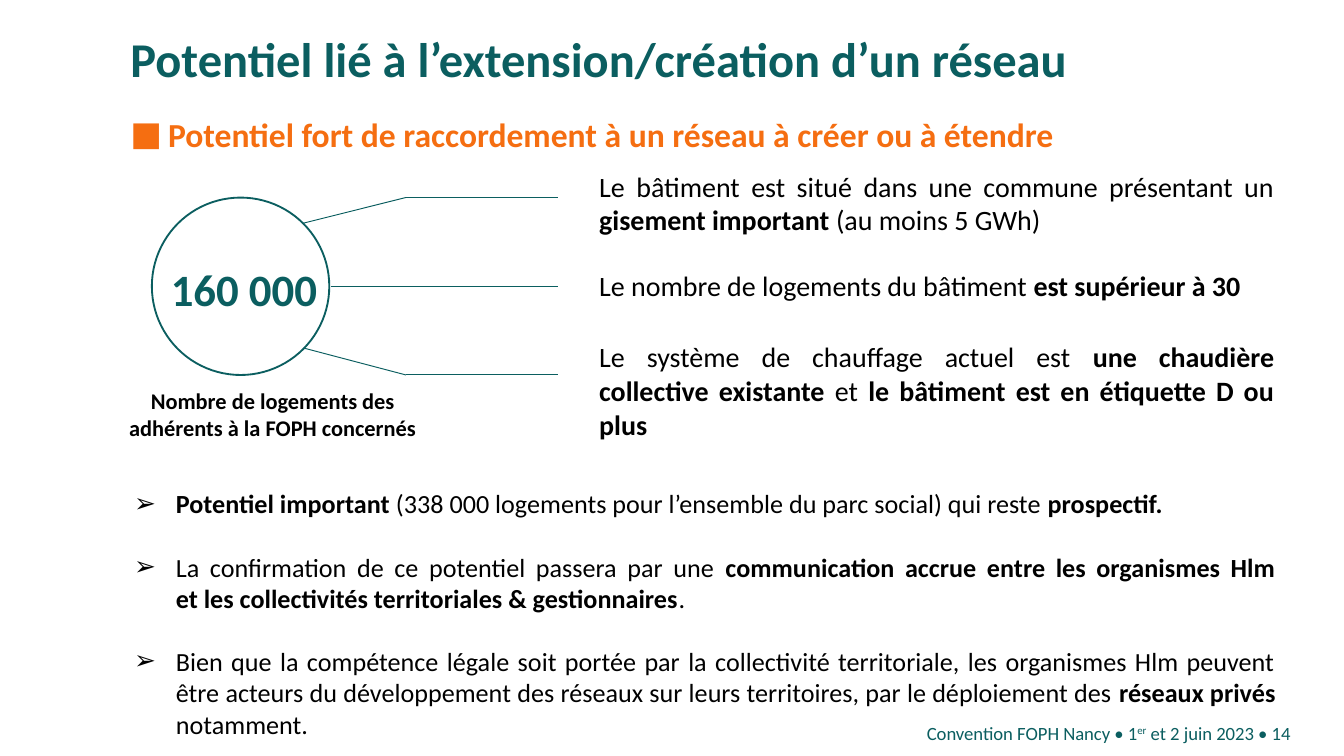
from lxml import etree
from pptx import Presentation
from pptx.dml.color import RGBColor
from pptx.enum import shapes, text
from pptx.oxml.ns import qn
from pptx.util import Inches, Pt

TEAL, ORANGE, BLACK = "0B5E60", "F56E11", "000000"
ALIGN = text.PP_ALIGN
FONT = "Calibri"
HARD_SPACE = chr(160)

deck = Presentation()
deck.slide_width, deck.slide_height = Inches(10), Inches(10 * 9 / 16)
page = deck.slides.add_slide(deck.slide_layouts[6])


def rgb(value):
    return RGBColor.from_string(value)


def add_text(place, paragraphs, size, color=BLACK, bold=None, align=ALIGN.LEFT,
             padded=True, anchor=text.MSO_ANCHOR.TOP, bullet=None, indent=0,
             line_spacing=None, gap=0):
    """Add a text box; words between ** marks are bold."""
    box = page.shapes.add_textbox(*[Inches(value) for value in place])
    frame = box.text_frame
    frame.word_wrap = True
    frame.vertical_anchor = anchor
    if not padded:
        frame.margin_left = frame.margin_right = 0
        frame.margin_top = frame.margin_bottom = 0
    for index, content in enumerate(paragraphs):
        para = frame.paragraphs[0] if index == 0 else frame.add_paragraph()
        para.alignment = align
        if line_spacing:
            para.line_spacing = line_spacing
        if index and gap:
            para.space_before = Pt(gap)
        if bullet:
            properties = para._p.get_or_add_pPr()
            properties.set("marL", str(Inches(indent)))
            properties.set("indent", str(-Inches(indent)))
            etree.SubElement(properties, qn("a:buFont")).set("typeface", FONT)
            etree.SubElement(properties, qn("a:buChar")).set("char", bullet)
        para.font.name = FONT
        para.font.size = Pt(size)
        para.font.color.rgb = rgb(color)
        para.font.bold = bold
        for position, words in enumerate(content.split("**")):
            if words:
                span = para.add_run()
                span.text = words
                if position % 2:
                    span.font.bold = True
    return box


# Title and subtitle
add_text((0.97, 0.28, 8.76, 0.42), ["Potentiel lié à l’extension/création d’un réseau"],
         26, TEAL, bold=True, padded=False, line_spacing=0.85)
add_text((0.97, 0.88, 8.75, 0.42),
         ["Potentiel fort de raccordement à un réseau à créer ou à étendre"],
         18, ORANGE, bold=True, padded=False, bullet="■", indent=0.28, line_spacing=0.9)

# Key figure in its circle
circle = page.shapes.add_shape(shapes.MSO_SHAPE.OVAL, Inches(1.13), Inches(1.47),
                               Inches(1.32), Inches(1.32))
circle.shadow.inherit = False
circle.fill.background()
circle.line.color.rgb = rgb(TEAL)
circle.line.width = Pt(1)
add_text((1.17, 1.9, 1.29, 0.5), ["160 000"], 24, TEAL, bold=True, align=ALIGN.CENTER)
add_text((0.75, 2.83, 2.56, 0.5), ["Nombre de logements des adhérents à la FOPH concernés"],
         12, bold=True, align=ALIGN.CENTER)

# Leader lines from the circle to the criteria
leaders = [
    [(2.26, 1.66), (3.02, 1.47), (4.15, 1.47)],
    [(2.46, 2.13), (4.15, 2.13)],
    [(2.26, 2.59), (3.02, 2.79), (4.15, 2.79)],
]
for points in leaders:
    for start, end in zip(points, points[1:]):
        leader = page.shapes.add_connector(
            shapes.MSO_CONNECTOR.STRAIGHT, *[Inches(value) for value in start + end])
        leader.line.color.rgb = rgb(TEAL)
        leader.line.width = Pt(0.5)
        etree.SubElement(leader._element.spPr, qn("a:effectLst"))

# Criteria
criteria = [
    (1.21, 0.61, ALIGN.JUSTIFY, "Le bâtiment est situé dans une commune présentant un "
     "**gisement important **(au moins 5 GWh)"),
    (1.95, 0.35, ALIGN.LEFT, "Le nombre de logements du bâtiment **est supérieur à 30**"),
    (2.48, 0.86, ALIGN.JUSTIFY, "Le système de chauffage actuel est **une chaudière collective "
     "existante **et **le bâtiment est en étiquette D ou plus**"),
]
for top, height, align, content in criteria:
    add_text((4.36, top, 5.22, height), [content], 15, align=align)

# Conclusions
conclusions = [
    "**Potentiel important **(338 000 logements pour l’ensemble du parc social) "
    "qui reste **prospectif.**",
    "La confirmation de ce potentiel passera par une **communication accrue entre les "
    f"organismes Hlm et{HARD_SPACE}les collectivités territoriales & gestionnaires**.",
    "Bien que la compétence légale soit portée par la collectivité territoriale, les "
    "organismes Hlm peuvent être acteurs du développement des réseaux sur leurs territoires, "
    "par le déploiement des **réseaux privés **notamment.",
]
add_text((0.9, 3.58, 8.69, 1.99), conclusions, 14, align=ALIGN.JUSTIFY,
         bullet="➢", indent=0.31, gap=17)

# Footer, with the ordinal raised
footer = add_text((3.42, 5.38, 5.91, 0.15), ["Convention FOPH Nancy • 1"], 10, TEAL,
                  align=ALIGN.RIGHT, padded=False, anchor=text.MSO_ANCHOR.MIDDLE)
footer_para = footer.text_frame.paragraphs[0]
ordinal = footer_para.add_run()
ordinal.text = "er"
ordinal._r.get_or_add_rPr().set("baseline", "30000")
footer_para.add_run().text = " et 2 juin 2023"
add_text((9.33, 5.38, 0.39, 0.15), [" • 14"], 10, TEAL, padded=False,
         anchor=text.MSO_ANCHOR.MIDDLE)

deck.save("out.pptx")
